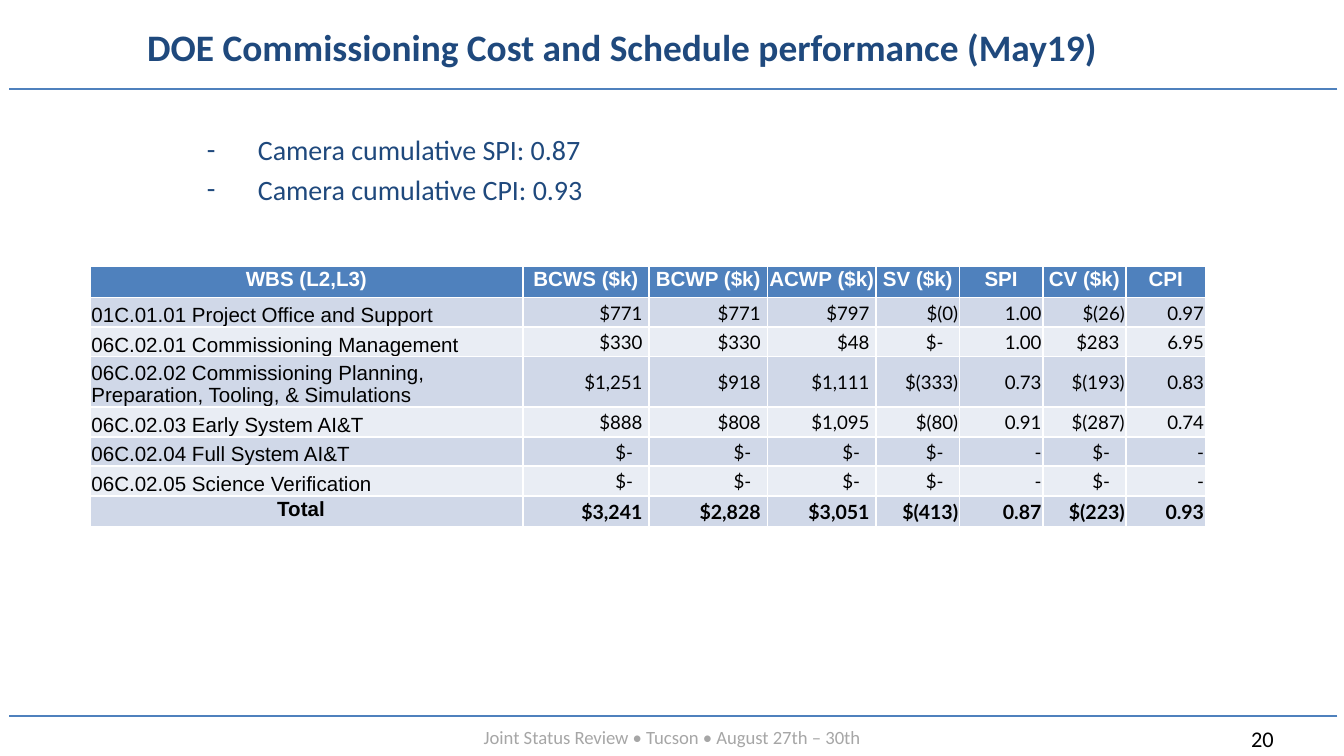
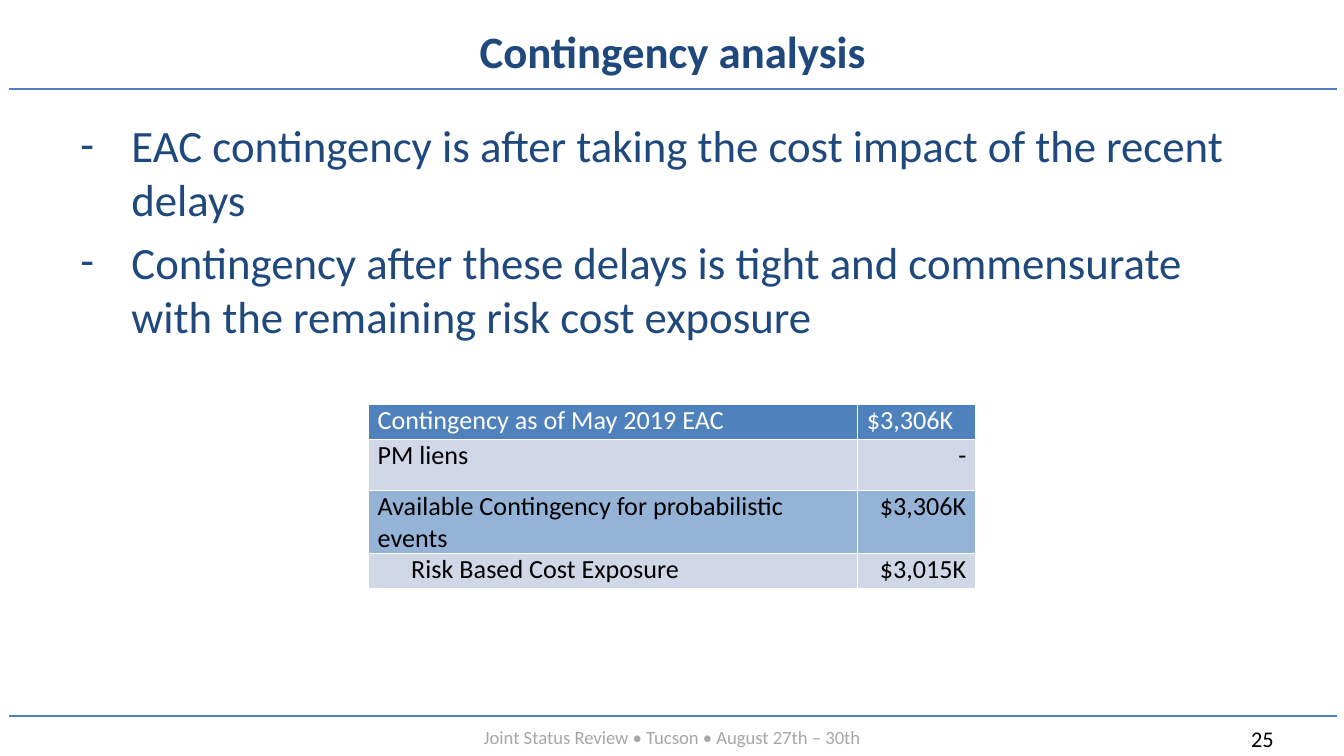
from lxml import etree
from pptx import Presentation
from pptx import util as u
from pptx.dml.color import RGBColor
from pptx.enum import shapes, text
from pptx.oxml import ns

NAVY, BLUE, MID = "1F497D", "4F81BD", "95B3D7"
BAND, PALE = "D0D8E8", "E9EDF4"
WHITE, BLACK, GREY = "FFFFFF", "000000", "A6A6A6"
LEFT, CENTER, RIGHT = text.PP_ALIGN.LEFT, text.PP_ALIGN.CENTER, text.PP_ALIGN.RIGHT
TOP, MIDDLE, BOTTOM = text.MSO_ANCHOR.TOP, text.MSO_ANCHOR.MIDDLE, text.MSO_ANCHOR.BOTTOM
FOOTER = "Joint Status Review • Tucson • August 27th – 30th"


def rgb(color):
    return RGBColor.from_string(color)


def sub(parent, tag, **attrs):
    return etree.SubElement(parent, ns.qn(tag), attrs)


class Deck:
    font = "Calibri"

    def __init__(self):
        self.prs = Presentation()
        self.prs.slide_width = u.Inches(10)
        self.prs.slide_height = u.Inches(10 * 9 / 16)
        self.s = None

    def slide(self, title, box, size, number):
        self.s = self.prs.slides.add_slide(self.prs.slide_layouts[5])
        self.rule(0.66)
        self.rule(5.33)
        self.textbox(FOOTER, (0.5, 5.35, 9, 0.27), 10, GREY, CENTER)
        self.textbox(number, (9.21, 5.35, 0.62, 0.3), 12, BLACK)
        sp = self.s.shapes.title
        sp.left, sp.top, sp.width, sp.height = map(u.Inches, box)
        tf = sp.text_frame
        tf.word_wrap = True
        tf.auto_size = text.MSO_AUTO_SIZE.NONE
        tf.vertical_anchor = MIDDLE
        self.run(tf.paragraphs[0], title, size, NAVY, CENTER, bold=True)

    def rule(self, y):
        cx = self.s.shapes.add_connector(
            shapes.MSO_CONNECTOR.STRAIGHT,
            u.Inches(9.95), u.Inches(y), u.Inches(0.07), u.Inches(y))
        cx.line.color.rgb = rgb(BLUE)
        cx.line.width = u.Pt(1)
        sub(cx._element.spPr, "a:effectLst")

    def run(self, p, words, size, color, align=LEFT, bold=False, font=None):
        p.alignment = align
        r = p.add_run()
        r.text = words
        r.font.name = font or self.font
        r.font.size = u.Pt(size)
        r.font.bold = bold
        r.font.color.rgb = rgb(color)

    def frame(self, box):
        tf = self.s.shapes.add_textbox(*map(u.Inches, box)).text_frame
        tf.word_wrap = True
        return tf

    def textbox(self, words, box, size, color, align=LEFT):
        self.run(self.frame(box).paragraphs[0], words, size, color, align)

    def bullets(self, items, box, size):
        tf = self.frame(box)
        for i, item in enumerate(items):
            p = tf.add_paragraph() if i else tf.paragraphs[0]
            pPr = p._p.get_or_add_pPr()
            pPr.set("marL", str(u.Inches(0.38)))
            pPr.set("indent", str(-u.Inches(0.38)))
            sub(pPr, "a:buFont", typeface=self.font)
            sub(pPr, "a:buChar", char="-")
            if i:
                p.space_before = u.Pt(size * 0.2)
            self.run(p, item, size, NAVY)

    def table(self, at, cols, rows):
        sp = self.s.shapes.add_table(
            len(rows), len(cols), *map(u.Inches, (*at, sum(cols), sum(rows))))
        tbl = sp.table
        for col, width in zip(tbl.columns, cols):
            col.width = u.Inches(width)
        for row, height in zip(tbl.rows, rows):
            row.height = u.Inches(height)
        return tbl

    def cell(self, cell, words, fill, insets, size, color, align=LEFT,
             anchor=TOP, bold=False, font=None):
        (cell.margin_left, cell.margin_top,
         cell.margin_right, cell.margin_bottom) = map(u.Inches, insets)
        cell.vertical_anchor = anchor
        tcPr = cell._tc.get_or_add_tcPr()
        for side in ("L", "R", "T", "B"):
            ln = sub(tcPr, f"a:ln{side}", w=str(u.Pt(1)))
            sub(sub(ln, "a:solidFill"), "a:srgbClr", val=WHITE)
        cell.fill.solid()
        cell.fill.fore_color.rgb = rgb(fill)
        self.run(cell.text_frame.paragraphs[0], words, size, color, align, bold, font)


def money_inset(value):
    if value == "$-":
        return 0.12
    return 0.05 if value.startswith("$") and value[-1].isdigit() else 0.01


def cost_slide(deck):
    deck.slide("DOE Commissioning Cost and Schedule performance (May19)",
               (0.92, 0.12, 7.42, 0.46), 20, "20")
    deck.bullets(["Camera cumulative SPI: 0.87", "Camera cumulative CPI: 0.93"],
                 (1.44, 0.94, 6.75, 0.67), 15)
    head = ["WBS (L2,L3)", "BCWS ($k)", "BCWP ($k)", "ACWP ($k)",
            "SV ($k)", "SPI", "CV ($k)", "CPI"]
    body = [
        ("01C.01.01 Project Office and Support", "$771 $771 $797 $(0) 1.00 $(26) 0.97"),
        ("06C.02.01 Commissioning Management", "$330 $330 $48 $- 1.00 $283 6.95"),
        ("06C.02.02 Commissioning Planning, Preparation, Tooling, & Simulations",
         "$1,251 $918 $1,111 $(333) 0.73 $(193) 0.83"),
        ("06C.02.03 Early System AI&T", "$888 $808 $1,095 $(80) 0.91 $(287) 0.74"),
        ("06C.02.04 Full System AI&T", "$- $- $- $- - $- -"),
        ("06C.02.05 Science Verification", "$- $- $- $- - $- -"),
        ("Total", "$3,241 $2,828 $3,051 $(413) 0.87 $(223) 0.93"),
    ]
    tbl = deck.table((0.67, 1.98), [3.22, 0.94, 0.88, 0.81, 0.62, 0.62, 0.62, 0.59],
                     [0.22] * (len(body) + 1))
    for c, words in enumerate(head):
        deck.cell(tbl.cell(0, c), words, BLUE, (0.01, 0.01, 0.01, 0.04), 11, WHITE,
                  CENTER, MIDDLE, True, "Arial")
    for i, (label, values) in enumerate(body, 1):
        fill = BAND if i % 2 else PALE
        total = label == "Total"
        insets = (0.01, 0.01, 0.09, 0.04) if total else (0.01, 0.01, 0.01, 0)
        deck.cell(tbl.cell(i, 0), label, fill, insets, 11, BLACK,
                  CENTER if total else LEFT, MIDDLE if total else BOTTOM, total, "Arial")
        for c, value in enumerate(values.split(), 1):
            deck.cell(tbl.cell(i, c), value, fill, (0.01, 0.01, money_inset(value), 0),
                      10.5 if total else 10, BLACK, RIGHT, MIDDLE, total, "Lato")


def contingency_slide(deck):
    deck.slide("Contingency analysis", (1.92, 0.15, 6.17, 0.46), 24, "25")
    deck.bullets(["EAC contingency is after taking the cost impact of the recent delays",
                  "Contingency after these delays is tight and commensurate with "
                  "the remaining risk cost exposure"], (0.5, 0.83, 9, 4.36), 24)
    rows = [
        ("Contingency as of May 2019 EAC", "$3,306K", BLUE, 0.07),
        ("PM liens", "-", BAND, 0.07),
        ("Available Contingency for probabilistic events", "$3,306K", MID, 0.07),
        ("Risk Based Cost Exposure", "$3,015K", BAND, 0.32),
    ]
    tbl = deck.table((2.74, 3.01), [3.64, 0.88], [0.26, 0.38, 0.47, 0.26])
    for i, (label, value, fill, left) in enumerate(rows):
        color, align = (BLACK, RIGHT) if i else (WHITE, LEFT)
        deck.cell(tbl.cell(i, 0), label, fill, (left, 0, 0.07, 0), 14, color)
        deck.cell(tbl.cell(i, 1), value, fill, (0.07, 0, 0.07, 0), 14, color, align)


def main():
    deck = Deck()
    cost_slide(deck)
    contingency_slide(deck)
    deck.prs.save("out.pptx")


if __name__ == "__main__":
    main()
